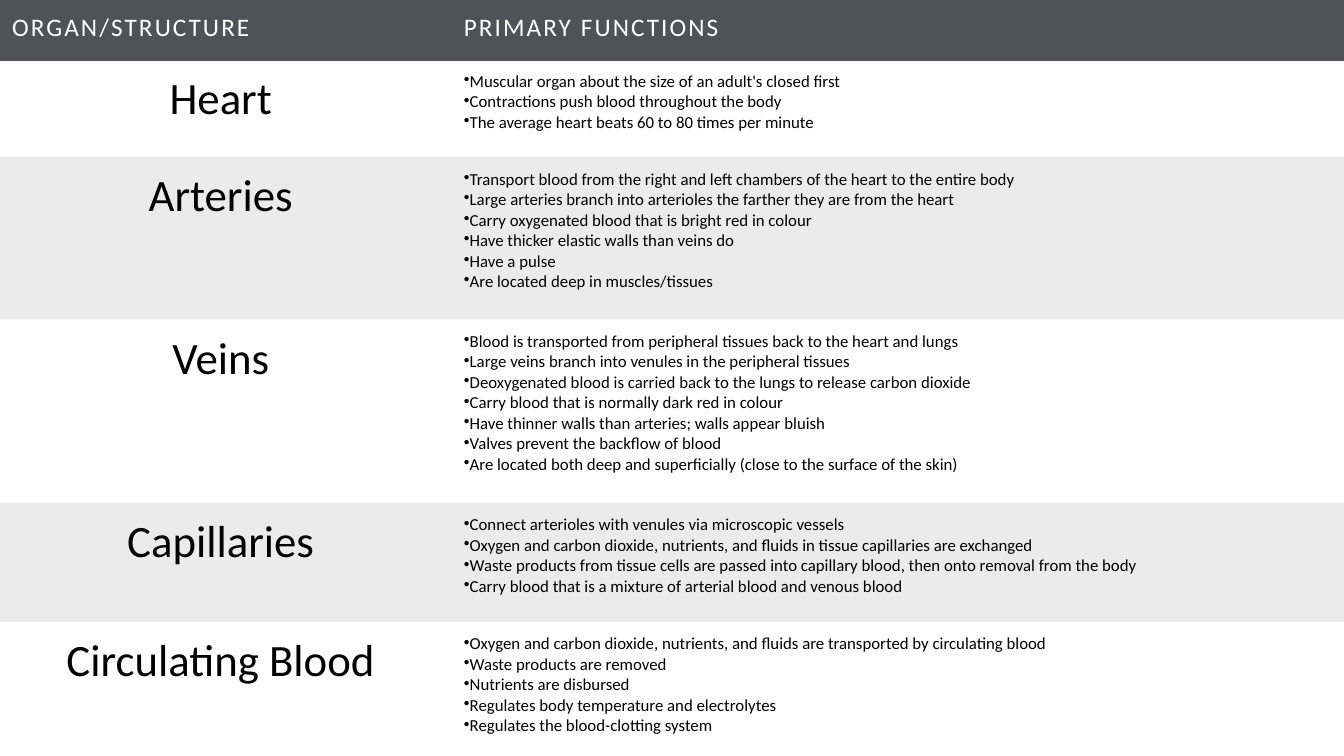
"""Build a slide with a table of circulatory organs and their functions."""
import pptx
import pptx.dml.color
import pptx.enum.text
import pptx.oxml.ns
import pptx.util
from lxml import etree

HEADINGS = ("ORGAN/STRUCTURE", "PRIMARY FUNCTIONS")
ORGANS = {
    "Heart": [
        "Muscular organ about the size of an adult's closed first",
        "Contractions push blood throughout the body",
        "The average heart beats 60 to 80 times per minute",
    ],
    "Arteries": [
        "Transport blood from the right and left chambers of the heart to the entire body",
        "Large arteries branch into arterioles the farther they are from the heart",
        "Carry oxygenated blood that is bright red in colour",
        "Have thicker elastic walls than veins do",
        "Have a pulse",
        "Are located deep in muscles/tissues",
    ],
    "Veins": [
        "Blood is transported from peripheral tissues back to the heart and lungs",
        "Large veins branch into venules in the peripheral tissues",
        "Deoxygenated blood is carried back to the lungs to release carbon dioxide",
        "Carry blood that is normally dark red in colour",
        "Have thinner walls than arteries; walls appear bluish",
        "Valves prevent the backflow of blood",
        "Are located both deep and superficially (close to the surface of the skin)",
    ],
    "Capillaries": [
        "Connect arterioles with venules via microscopic vessels",
        "Oxygen and carbon dioxide, nutrients, and fluids in tissue capillaries are exchanged",
        "Waste products from tissue cells are passed into capillary blood, then onto removal from the body",
        "Carry blood that is a mixture of arterial blood and venous blood",
    ],
    "Circulating Blood": [
        "Oxygen and carbon dioxide, nutrients, and fluids are transported by circulating blood",
        "Waste products are removed",
        "Nutrients are disbursed",
        "Regulates body temperature and electrolytes",
        "Regulates the blood-clotting system",
    ],
}
WIDTH, HEIGHT = 13.33, 7.5
COLUMNS = (4.48, 8.85)
ROWS = (0.59, 0.97, 1.61, 1.82, 1.18, 1.33)
INSET = 0.12
BAND_ALPHA = "8000"
PLAIN_STYLE = "{2D5ABB26-0587-4C30-8999-92F81FD0307C}"
HARD_SPACE = chr(160)

WHITE = pptx.dml.color.RGBColor(0xFF, 0xFF, 0xFF)
BLACK = pptx.dml.color.RGBColor(0, 0, 0)
SLATE = pptx.dml.color.RGBColor(0x50, 0x53, 0x56)
RULE = pptx.dml.color.RGBColor(0x54, 0x4F, 0x52)

HEADING_FONT = {"name": "Calibri", "size": pptx.util.Pt(18)}
ORGAN_FONT = {"name": "Calibri", "size": pptx.util.Pt(32)}
FUNCTION_FONT = {"name": "Calibri", "size": pptx.util.Pt(12)}


def add_child(parent, tag, **attributes):
    return etree.SubElement(parent, pptx.oxml.ns.qn(tag), **attributes)


def write_cell(cell, lines, font, color, centred=False, bulleted=False, spacing=None):
    for side in ("left", "right", "top", "bottom"):
        setattr(cell, f"margin_{side}", pptx.util.Inches(INSET))
    frame = cell.text_frame
    for index, line in enumerate(lines):
        para = frame.add_paragraph() if index else frame.paragraphs[0]
        if centred:
            para.alignment = pptx.enum.text.PP_ALIGN.CENTER
        if bulleted:
            properties = para._p.get_or_add_pPr()
            properties.set("marL", "0")
            properties.set("indent", "0")
            add_child(properties, "a:buChar", char="•")
        span = para.add_run()
        span.text = line + HARD_SPACE
        for name, value in font.items():
            setattr(span.font, name, value)
        span.font.color.rgb = color
        if spacing:
            span.font._element.set("spc", spacing)


def fill_cell(cell, color, alpha=None):
    cell.fill.solid()
    cell.fill.fore_color.rgb = color
    if alpha:
        swatch = cell._tc.tcPr.find(".//" + pptx.oxml.ns.qn("a:srgbClr"))
        add_child(swatch, "a:alpha", val=alpha)


def rule_below(cell, color, points):
    properties = cell._tc.get_or_add_tcPr()
    line = add_child(properties, "a:lnB", w=str(pptx.util.Pt(points)))
    add_child(add_child(line, "a:solidFill"), "a:srgbClr", val=str(color))
    properties.insert(0, line)


def main():
    deck = pptx.Presentation()
    deck.slide_width = pptx.util.Inches(WIDTH)
    deck.slide_height = pptx.util.Inches(HEIGHT)
    page = deck.slides.add_slide(deck.slide_layouts[6])
    frame = page.shapes.add_table(
        len(ROWS), len(COLUMNS), 0, 0, deck.slide_width, deck.slide_height)
    table = frame.table
    table.first_row = table.horz_banding = False
    table._tbl.tblPr.find(pptx.oxml.ns.qn("a:tableStyleId")).text = PLAIN_STYLE
    for column, width in zip(table.columns, COLUMNS):
        column.width = pptx.util.Inches(width)
    for row, height in zip(table.rows, ROWS):
        row.height = pptx.util.Inches(height)

    for index, heading in enumerate(HEADINGS):
        cell = table.cell(0, index)
        write_cell(cell, [heading], HEADING_FONT, WHITE, spacing="150")
        fill_cell(cell, SLATE)
        rule_below(cell, RULE, 3)
    for index, (organ, functions) in enumerate(ORGANS.items(), start=1):
        name_cell, function_cell = table.rows[index].cells
        write_cell(name_cell, [organ], ORGAN_FONT, BLACK, centred=True)
        write_cell(function_cell, functions, FUNCTION_FONT, BLACK, bulleted=True)
        for cell in (name_cell, function_cell):
            if index % 2 == 0:
                fill_cell(cell, BLACK, BAND_ALPHA)
            else:
                cell.fill.background()
    deck.save("out.pptx")


if __name__ == "__main__":
    main()
